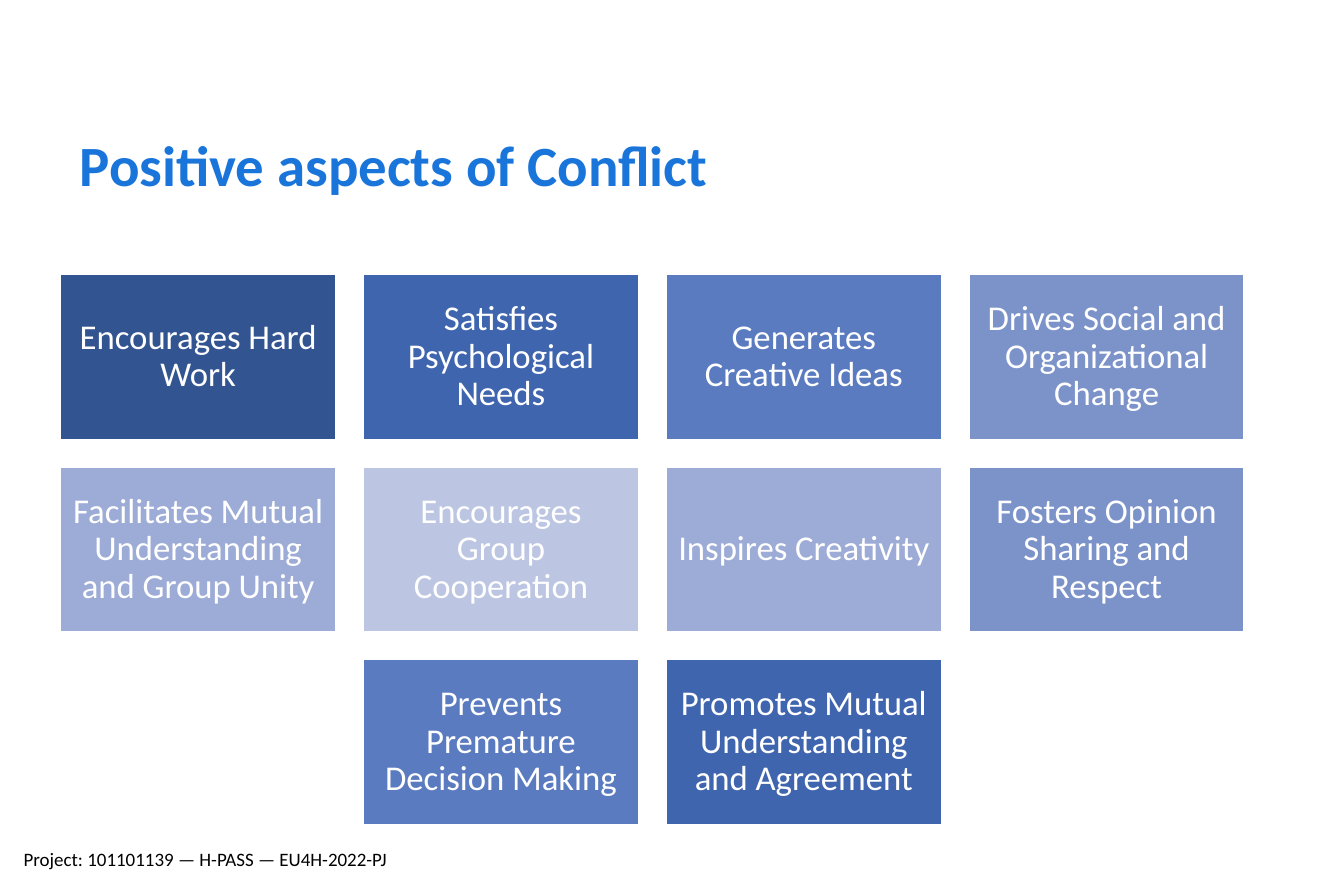
from dataclasses import dataclass

from pptx import Presentation
from pptx.dml.color import RGBColor
from pptx.enum.shapes import MSO_SHAPE
from pptx.enum.text import MSO_ANCHOR, PP_ALIGN
from pptx.util import Pt

RECTANGLE = MSO_SHAPE.RECTANGLE
TOP, MIDDLE, BOTTOM = MSO_ANCHOR.TOP, MSO_ANCHOR.MIDDLE, MSO_ANCHOR.BOTTOM
LEFT, CENTER = PP_ALIGN.LEFT, PP_ALIGN.CENTER

TITLE = "Positive aspects of Conflict"
FOOTER = "Project: 101101139 — H-PASS — EU4H-2022-PJ"
# Each card: wording, shade (0 is the darkest)
CARD_ROWS = [
    [
        ("Encourages Hard Work", 0),
        ("Satisfies Psychological Needs", 1),
        ("Generates Creative Ideas", 2),
        ("Drives Social and Organizational Change", 3),
    ],
    [
        ("Facilitates Mutual Understanding and Group Unity", 4),
        ("Encourages Group Cooperation", 5),
        ("Inspires Creativity", 4),
        ("Fosters Opinion Sharing and Respect", 3),
    ],
    [
        ("Prevents Premature Decision Making", 2),
        ("Promotes Mutual Understanding and Agreement", 1),
    ],
]


@dataclass(frozen=True)
class Theme:
    font: str = "Calibri"
    title_color: str = "1A75DB"
    card_text: str = "FFFFFF"
    card_line: str = "FFFFFF"
    footer_color: str = "000000"
    shades: tuple = ("325491", "4065AF", "5B7BC0", "7C93CA", "9DACD6", "BCC6E2")
    title_size: int = 36
    card_size: int = 22
    footer_size: int = 12


THEME = Theme()
PAGE_SIZE = (850.4, 566.9)
TITLE_AREA = (43.2, 70.6, 473, 59)
FOOTER_AREA = (7.9, 532.8, 261.4, 19.4)
GRID_LEFT, GRID_TOP = 38.3, 173.5
CARD_WIDTH, CARD_HEIGHT, GAP = 174.2, 104.5, 17.4
CARD_INSET = 6.6


def points(values):
    return [Pt(value) for value in values]


def write(box, text, size, color, anchor, align=LEFT, bold=False, spacing=1.0):
    frame = box.text_frame
    frame.word_wrap = True
    frame.vertical_anchor = anchor
    frame.text = text
    para = frame.paragraphs[0]
    para.alignment = align
    para.line_spacing = spacing
    font = para.runs[0].font
    for name, value in {"name": THEME.font, "size": Pt(size), "bold": bold}.items():
        setattr(font, name, value)
    font.color.rgb = RGBColor.from_string(color)


def add_title(page):
    title = page.shapes.title
    for name, value in zip(("left", "top", "width", "height"), points(TITLE_AREA)):
        setattr(title, name, value)
    write(title, TITLE, THEME.title_size, THEME.title_color, BOTTOM,
          bold=True, spacing=0.9)


def add_card(page, left, top, text, shade):
    card = page.shapes.add_shape(
        RECTANGLE, *points((left, top, CARD_WIDTH, CARD_HEIGHT)))
    card.shadow.inherit = False
    card.fill.solid()
    card.fill.fore_color.rgb = RGBColor.from_string(THEME.shades[shade])
    card.line.color.rgb = RGBColor.from_string(THEME.card_line)
    card.line.width = Pt(1)
    for side in ("left", "top", "right", "bottom"):
        setattr(card.text_frame, f"margin_{side}", Pt(CARD_INSET))
    write(card, text, THEME.card_size, THEME.card_text, MIDDLE, CENTER, spacing=0.9)


def add_cards(page):
    """Lay the cards out in rows, with short rows centred under the widest."""
    columns = max(len(row) for row in CARD_ROWS)
    for row_index, row in enumerate(CARD_ROWS):
        first_column = (columns - len(row)) / 2
        top = GRID_TOP + row_index * (CARD_HEIGHT + GAP)
        for column, (text, shade) in enumerate(row, start=0):
            left = GRID_LEFT + (first_column + column) * (CARD_WIDTH + GAP)
            add_card(page, left, top, text, shade)


def main():
    deck = Presentation()
    deck.slide_width, deck.slide_height = points(PAGE_SIZE)
    page = deck.slides.add_slide(deck.slide_layouts[5])
    add_title(page)
    add_cards(page)
    footer = page.shapes.add_textbox(*points(FOOTER_AREA))
    write(footer, FOOTER, THEME.footer_size, THEME.footer_color, TOP)
    deck.save("out.pptx")


if __name__ == "__main__":
    main()
